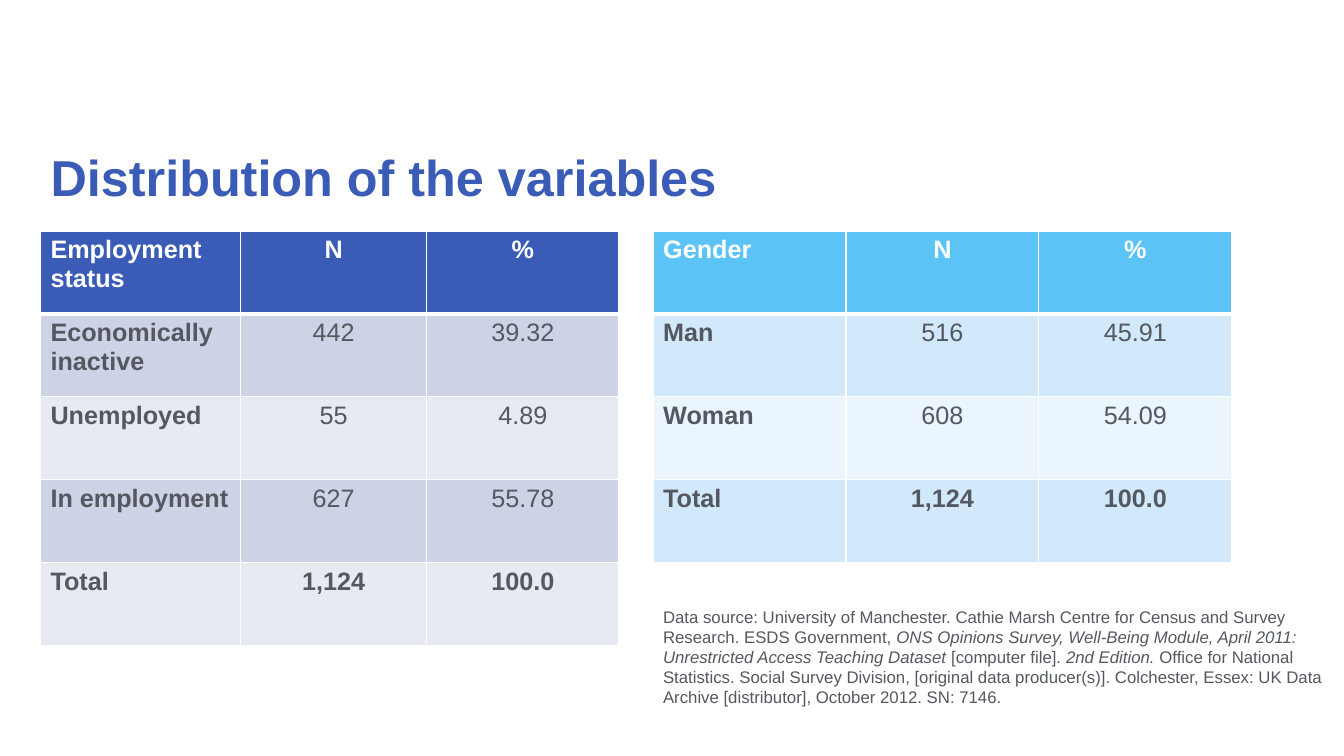
from pptx import Presentation
from pptx.dml.color import RGBColor
from pptx.enum.text import MSO_ANCHOR as Anchor, MSO_AUTO_SIZE as AutoSize, PP_ALIGN as Align
from pptx.oxml import parse_xml
from pptx.oxml.ns import nsdecls
from pptx.util import Cm, Pt

INK, WHITE, BLUE, SKY = "545860", "FFFFFF", "3A5CB7", "5BC3F5"
BLUE_BANDS = ("CED2E6", "E8EAF3")
SKY_BANDS = ("D2E9FB", "EAF5FD")
LEFT, RIGHT, TABLE_TOP, ROW_H = 1.02, 16.46, 5.82, 2.09

EMPLOYMENT = [
    ("Employment status", "N", "%"),
    ("Economically inactive", "442", "39.32"),
    ("Unemployed", "55", "4.89"),
    ("In employment", "627", "55.78"),
    ("Total", "1,124", "100.0"),
]
GENDER = [
    ("Gender", "N", "%"),
    ("Man", "516", "45.91"),
    ("Woman", "608", "54.09"),
    ("Total", "1,124", "100.0"),
]
SOURCE = [
    ("Data source: University of Manchester. Cathie Marsh Centre for Census and "
     "Survey Research. ESDS Government, ", False),
    ("ONS Opinions Survey, Well-Being Module, April 2011: "
     "Unrestricted Access Teaching Dataset", True),
    (" [computer file]. ", False),
    ("2nd Edition.", True),
    (" Office for National Statistics. Social Survey Division, [original data "
     "producer(s)]. Colchester, Essex: UK Data Archive [distributor], "
     "October 2012. SN: 7146.", False),
]


def rgb(value):
    return RGBColor.from_string(value)


def add_text(p, text, size=18, color=INK, bold=False, italic=False, align=Align.LEFT):
    p.alignment = align
    r = p.add_run()
    r.text = text
    font = r.font
    font.name, font.size, font.bold, font.italic = "Arial", Pt(size), bold, italic
    font.color.rgb = rgb(color)


class SlideBuilder:
    """Holds the current slide and draws its elements in one style."""

    def __init__(self, prs):
        self.slide = prs.slides.add_slide(prs.slide_layouts[5])

    def title(self, text, left, top, width, height):
        sp = self.slide.shapes.title
        sp.left, sp.top, sp.width, sp.height = map(Cm, (left, top, width, height))
        tf = sp.text_frame
        tf.auto_size = AutoSize.NONE
        tf.vertical_anchor = Anchor.MIDDLE
        p = tf.paragraphs[0]
        p.line_spacing = 0.9
        add_text(p, text, size=36, color=BLUE, bold=True)

    def borders(self, cell, **widths):
        tc_pr = cell._tc.get_or_add_tcPr()
        for side in "LRTB":
            width = Pt(widths.get(side, 1))
            tc_pr.append(parse_xml(
                f'<a:ln{side} {nsdecls("a")} w="{width}"><a:solidFill>'
                f'<a:srgbClr val="{WHITE}"/></a:solidFill></a:ln{side}>'))

    def table(self, rows, left, widths, head, bands):
        table = self.slide.shapes.add_table(
            len(rows), len(widths), Cm(left), Cm(TABLE_TOP),
            Cm(sum(widths)), Cm(ROW_H * len(rows))).table
        for column, width in zip(table.columns, widths):
            column.width = Cm(width)
        for i, row in enumerate(rows):
            table.rows[i].height = Cm(ROW_H)
            for j, text in enumerate(row):
                cell = table.cell(i, j)
                self.borders(cell, T=3 if i == 1 else 1, B=3 if i == 0 else 1)
                cell.fill.solid()
                cell.fill.fore_color.rgb = rgb(bands[(i - 1) % 2] if i else head)
                add_text(cell.text_frame.paragraphs[0], text,
                         color=INK if i else WHITE,
                         bold=j == 0 or i in (0, len(rows) - 1),
                         align=Align.CENTER if j else Align.LEFT)

    def note(self, parts, left, top, width, height):
        sp = self.slide.shapes.add_textbox(*map(Cm, (left, top, width, height)))
        tf = sp.text_frame
        tf.word_wrap = True
        tf.auto_size = AutoSize.SHAPE_TO_FIT_TEXT
        for text, italic in parts:
            add_text(tf.paragraphs[0], text, size=12, italic=italic)


def main():
    prs = Presentation()
    prs.slide_width, prs.slide_height = Cm(33.87), Cm(19.05)
    s = SlideBuilder(prs)
    s.title("Distribution of the variables", LEFT, 2.69, 31.85, 3.68)
    s.table(EMPLOYMENT, LEFT, (5.05, 4.68, 4.85), BLUE, BLUE_BANDS)
    s.table(GENDER, RIGHT, (4.86,) * 3, SKY, SKY_BANDS)
    s.note(SOURCE, RIGHT, 15.16, 17.58, 2.82)
    prs.save("out.pptx")


if __name__ == "__main__":
    main()
